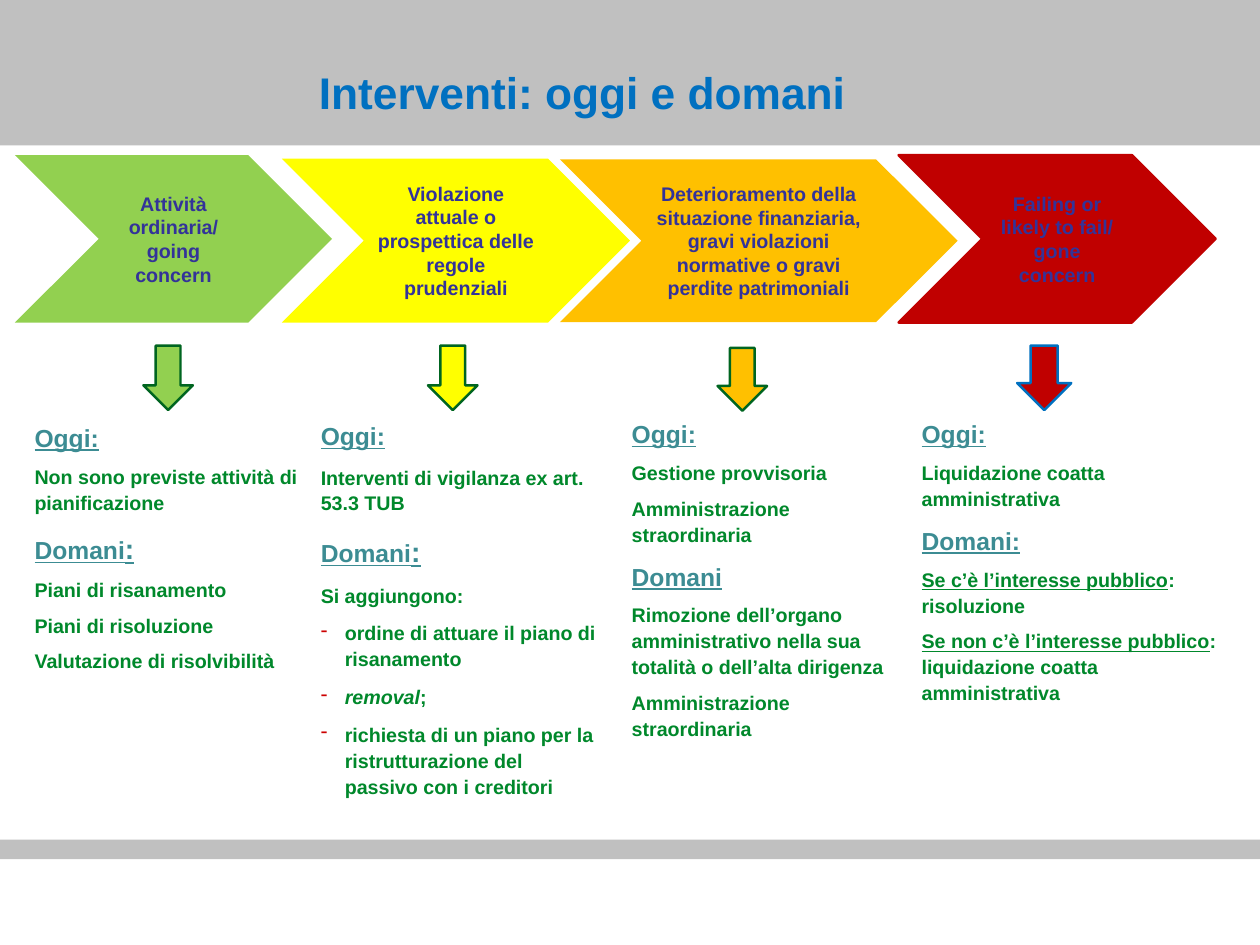
import pptx
import pptx.dml.color
import pptx.enum.shapes
import pptx.enum.text
import pptx.oxml.ns
import pptx.util
from lxml import etree

Cm, Pt = pptx.util.Cm, pptx.util.Pt
SHAPE = pptx.enum.shapes.MSO_SHAPE
ALIGN = pptx.enum.text.PP_ALIGN
ANCHOR = pptx.enum.text.MSO_ANCHOR

COLOURS = {
    "band": "C0C0C0", "title": "0070C0", "stage": "333399",
    "heading": "3C8C93", "body": "00882B", "dash": "CC0000",
    "green": "92D050", "yellow": "FFFF00", "orange": "FFC000", "red": "C00000",
    "outline": "006520", "blue": "0070C0",
}

# Run formats: size in points, colour name and other font values
STYLES = {
    "title": {"size": 36, "colour": "title"},
    "stage": {"size": 16, "colour": "stage"},
    "heading": {"size": 20, "colour": "heading", "underline": True},
    "colon": {"size": 23, "colour": "heading", "underline": True},
    "body": {"size": 16, "colour": "body"},
    "case": {"size": 16, "colour": "body", "underline": True},
    "foreign": {"size": 16, "colour": "body", "italic": True},
}

# Each paragraph is a list of (style, text) runs
TODAY = [("heading", "Oggi:")]
TOMORROW_COLON = [("heading", "Domani"), ("colon", ":")]


def body(*lines):
    return [[("body", line)] for line in lines]


ORDINARY = [
    TODAY,
    *body("Non sono previste attività di pianificazione"),
    TOMORROW_COLON,
    *body("Piani di risanamento", "Piani di risoluzione", "Valutazione di risolvibilità"),
]
VIOLATION = [
    TODAY,
    *body("Interventi di vigilanza ex art. 53.3 TUB"),
    TOMORROW_COLON,
    *body("Si aggiungono:", "ordine di attuare il piano di risanamento"),
    [("foreign", "removal"), ("body", ";")],
    *body("richiesta di un piano per la ristrutturazione del passivo con i creditori"),
]
DETERIORATION = [
    TODAY,
    *body("Gestione provvisoria", "Amministrazione straordinaria"),
    [("heading", "Domani")],
    *body("Rimozione dell’organo amministrativo nella sua totalità o dell’alta dirigenza",
          "Amministrazione straordinaria"),
]
FAILING = [
    TODAY,
    *body("Liquidazione coatta amministrativa"),
    [("heading", "Domani:")],
    [("case", "Se c’è l’interesse pubblico"), ("body", ": risoluzione")],
    [("case", "Se non c’è l’interesse pubblico"), ("body", ": liquidazione coatta amministrativa")],
]

# Stage text, colour, chevron box, arrow box, arrow outline (boxes in cm)
STAGES = [
    (["Attività ordinaria/", "going concern"], "green",
     (0.43, 4.45, 9.09, 4.8), (4.11, 9.91, 1.42, 1.85), "outline"),
    (["Violazione attuale o prospettica delle regole prudenziali"], "yellow",
     (8.08, 4.55, 9.98, 4.7), (12.27, 9.91, 1.42, 1.85), "outline"),
    (["Deterioramento della situazione finanziaria, gravi violazioni normative"
      " o gravi perdite patrimoniali"], "orange",
     (16.05, 4.57, 11.4, 4.67), (20.57, 9.98, 1.42, 1.8), "outline"),
    (["Failing or likely to fail/", "gone concern"], "red",
     (25.76, 4.45, 9.09, 4.8), (29.16, 9.91, 1.55, 1.85), "blue"),
]


def colour(name):
    return pptx.dml.color.RGBColor.from_string(COLOURS[name])


def set_values(target, values):
    for name, value in values.items():
        setattr(target, name, value)


def place(part, box):
    set_values(part, dict(zip(("left", "top", "width", "height"), map(Cm, box))))


def prepare_frame(part, side=0.36, anchor=ANCHOR.TOP):
    frame = part.text_frame
    set_values(frame, {
        "word_wrap": True, "auto_size": pptx.enum.text.MSO_AUTO_SIZE.NONE,
        "vertical_anchor": anchor,
        "margin_left": Cm(side), "margin_right": Cm(side),
        "margin_top": Cm(0.18), "margin_bottom": Cm(0.18),
    })
    return frame


def add_run(paragraph, style, text):
    run = paragraph.add_run()
    run.text = text
    values = dict(STYLES[style])
    run.font.color.rgb = colour(values.pop("colour"))
    values["size"] = Pt(values["size"])
    set_values(run.font, {"name": "Arial", "bold": True, **values})


def next_paragraph(frame, index):
    return frame.paragraphs[0] if index == 0 else frame.add_paragraph()


def add_bullet(paragraph, dashed, indent):
    properties = paragraph._p.get_or_add_pPr()
    hanging = 0.69 if dashed else 0
    properties.set("marL", str(Cm(indent + hanging)))
    properties.set("indent", str(-Cm(hanging)))
    qn = pptx.oxml.ns.qn
    if dashed:
        dash_colour = etree.SubElement(properties, qn("a:buClr"))
        etree.SubElement(dash_colour, qn("a:srgbClr")).set("val", COLOURS["dash"])
        etree.SubElement(properties, qn("a:buChar")).set("char", "-")
    else:
        etree.SubElement(properties, qn("a:buNone"))


def write_measures(part, measures, side=0.36, indent=0.0, after=0.0, first_dash=None):
    """Fill a column; paragraphs from first_dash on get a dash."""
    frame = prepare_frame(part, side)
    for index, runs in enumerate(measures):
        paragraph = next_paragraph(frame, index)
        add_bullet(paragraph, first_dash is not None and index >= first_dash, indent)
        size = max(STYLES[style]["size"] for style, _ in runs)
        set_values(paragraph, {
            "level": 1, "alignment": ALIGN.LEFT, "line_spacing": 1.1,
            "space_before": Pt(size / 2 if index else 0), "space_after": Pt(size * after),
        })
        for style, text in runs:
            add_run(paragraph, style, text)


def add_block(slide, kind, box, fill=None, line=None):
    block = slide.shapes.add_shape(kind, *map(Cm, box))
    block.shadow.inherit = False
    if fill:
        block.fill.solid()
        block.fill.fore_color.rgb = colour(fill)
    else:
        block.fill.background()
    if line:
        block.line.color.rgb = colour(line)
        block.line.width = Pt(2)
    else:
        block.line.fill.background()
    return block


def add_bands(slide):
    for box in ((0, 0, 36.12, 4.17), (0, 24.08, 36.12, 0.56)):
        band = add_block(slide, SHAPE.RECTANGLE, box, "band")
        # Send the band behind the title
        band.element.getparent().insert(2, band.element)


def add_stage(slide, lines, fill, chevron_box, arrow_box, arrow_line):
    chevron = add_block(slide, SHAPE.CHEVRON, chevron_box, fill, "red" if fill == "red" else None)
    frame = prepare_frame(chevron, anchor=ANCHOR.MIDDLE)
    for index, line in enumerate(lines):
        paragraph = next_paragraph(frame, index)
        paragraph.alignment = ALIGN.CENTER
        add_run(paragraph, "stage", line)
    add_block(slide, SHAPE.DOWN_ARROW, arrow_box, fill, arrow_line)


def main():
    deck = pptx.Presentation()
    set_values(deck, {"slide_width": Cm(36.12), "slide_height": Cm(27.1)})
    slide = deck.slides.add_slide(deck.slide_layouts[1])

    # Title and grey bands
    heading = slide.shapes.title
    place(heading, (2.67, 1.65, 28.04, 1.95))
    title_line = prepare_frame(heading, 0.18, ANCHOR.MIDDLE).paragraphs[0]
    title_line.alignment = ALIGN.CENTER
    add_run(title_line, "title", "Interventi: oggi e domani")
    add_bands(slide)

    # Stages with their arrows
    for stage in STAGES:
        add_stage(slide, *stage)

    # Measures under each stage
    ordinary = slide.placeholders[1]
    place(ordinary, (0.56, 11.86, 8.53, 10.72))
    write_measures(ordinary, ORDINARY, side=0.18, indent=0.25)
    violation = add_block(slide, SHAPE.FLOWCHART_ALTERNATE_PROCESS, (8.1, 11.33, 9.96, 12.73))
    write_measures(violation, VIOLATION, indent=0.25, after=0.1, first_dash=4)
    for measures, box in ((DETERIORATION, (17.75, 11.76, 7.98, 10.82)),
                          (FAILING, (26.06, 11.76, 9.4, 8.97))):
        write_measures(slide.shapes.add_textbox(*map(Cm, box)), measures)

    deck.save("out.pptx")


if __name__ == "__main__":
    main()
